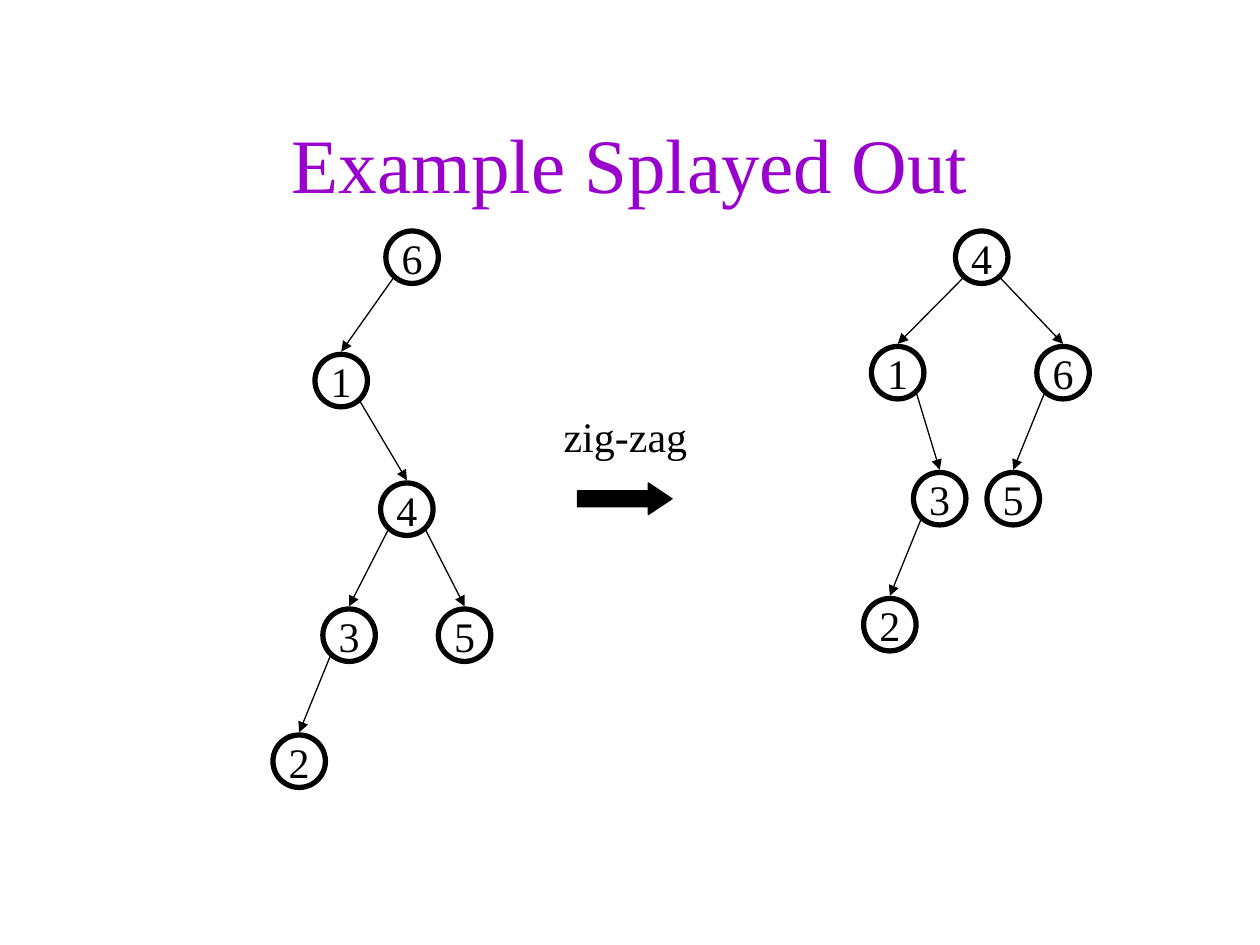
import pptx
import pptx.util
import pptx.dml.color
import pptx.enum.shapes
import pptx.enum.text
import pptx.oxml
import pptx.oxml.ns

deck = pptx.Presentation()
deck.slide_width = pptx.util.Inches(10)
deck.slide_height = pptx.util.Inches(7.5)
slide = deck.slides.add_slide(deck.slide_layouts[5])
shapes = slide.shapes
shape_kinds = pptx.enum.shapes.MSO_SHAPE
centre = pptx.enum.text.PP_ALIGN.CENTER
middle = pptx.enum.text.MSO_ANCHOR.MIDDLE


def grid(*cells):
    return [round(cell * deck.slide_width / 120) for cell in cells]


def write(frame, words, size, colour):
    run = frame.paragraphs[0].add_run()
    run.text = words
    run.font.name = "Times New Roman"
    run.font.size = pptx.util.Pt(size)
    run.font.color.rgb = pptx.dml.color.RGBColor.from_string(colour)


black = pptx.dml.color.RGBColor.from_string("000000")

heading = shapes.title
heading.left, heading.top, heading.width, heading.height = grid(9, 8, 102, 15)
heading.text_frame.vertical_anchor = middle
heading.text_frame.paragraphs[0].alignment = centre
write(heading.text_frame, "Example Splayed Out", 44, "9900CC")

rotation = shapes.add_shape(shape_kinds.RIGHT_ARROW, *grid(55, 46, 9, 3))
rotation.adjustments[0] = 0.5
rotation.adjustments[1] = 0.75
rotation.shadow.inherit = False
rotation.fill.solid()
rotation.fill.fore_color.rgb = black
rotation.line.color.rgb = black
rotation.line.width = pptx.util.Pt(0.75)

rotation_name = shapes.add_textbox(*grid(52.5, 38.5, 14.2, 6))
rotation_name.text_frame.word_wrap = False
write(rotation_name.text_frame, "zig-zag", 24, "000000")

before = {"6": (36.75, 22), "1": (30, 33.75), "4": (36.25, 46),
          "3": (30.75, 58), "5": (41.75, 58), "2": (26, 70)}
after = {"4": (91, 22), "1": (83, 33), "6": (98.75, 33),
         "3": (87, 45), "5": (94, 45), "2": (82.25, 57)}
trees = [(before, ["61", "14", "43", "45", "32"]),
         (after, ["41", "46", "13", "65", "32"])]
node_size = 5

for nodes, edges in trees:
    for parent, child in edges:
        parent_left, parent_top = nodes[parent]
        child_left, child_top = nodes[child]
        side = 1.8 if child_left > parent_left else -1.8
        edge = shapes.add_connector(
            pptx.enum.shapes.MSO_CONNECTOR.STRAIGHT,
            *grid(parent_left + node_size / 2 + side, parent_top + 4.5,
                  child_left + node_size / 2, child_top - 0.25))
        edge.line.color.rgb = black
        edge.line.width = pptx.util.Pt(0.75)
        head = pptx.oxml.parse_xml(
            f'<a:tailEnd {pptx.oxml.ns.nsdecls("a")} type="triangle"/>')
        edge.line._get_or_add_ln().append(head)
        edge._element.spPr.append(pptx.oxml.parse_xml(
            f'<a:effectLst {pptx.oxml.ns.nsdecls("a")}/>'))

    for key, (left, top) in nodes.items():
        node = shapes.add_shape(shape_kinds.OVAL, *grid(left, top, node_size, node_size))
        node.shadow.inherit = False
        node.fill.background()
        node.line.color.rgb = black
        node.line.width = pptx.util.Pt(3)
        node.text_frame.word_wrap = False
        node.text_frame.vertical_anchor = middle
        node.text_frame.paragraphs[0].alignment = centre
        write(node.text_frame, key, 24, "000000")

deck.save("out.pptx")
